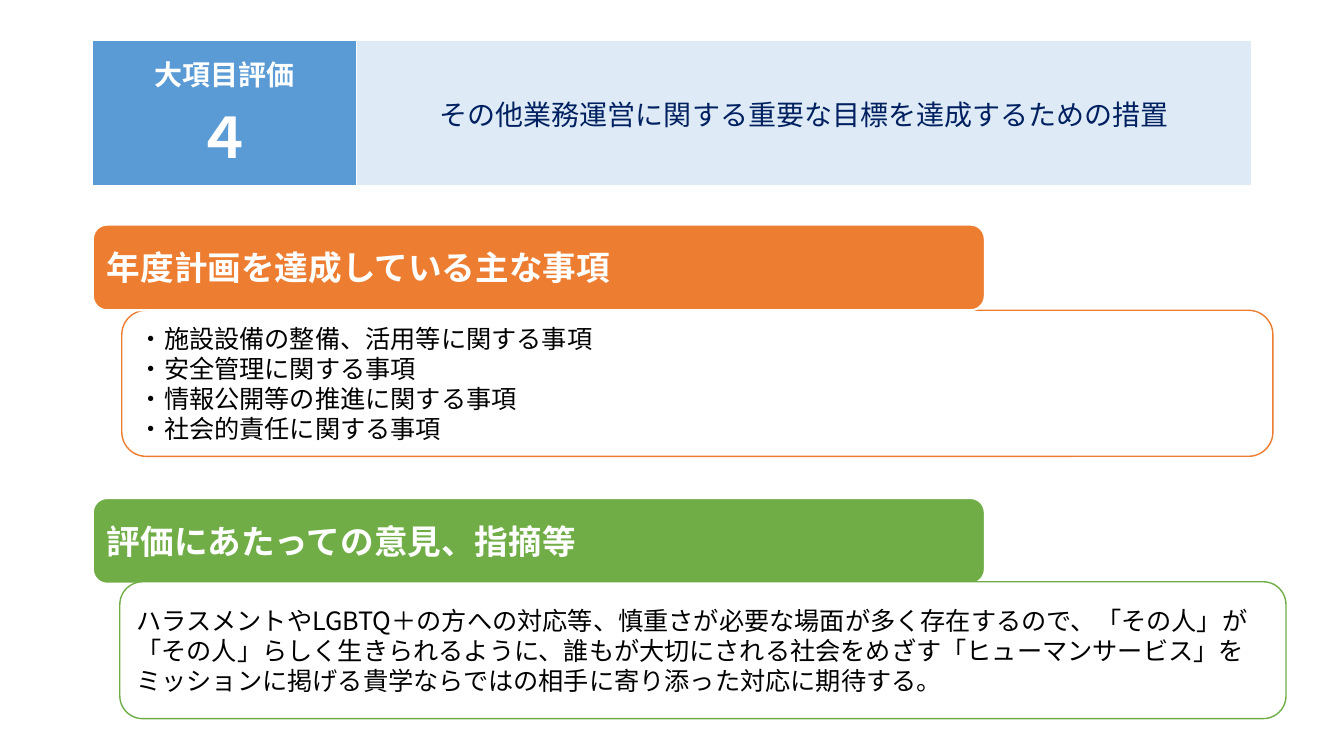
from dataclasses import dataclass

from lxml import etree
from pptx import Presentation
from pptx import util as u
from pptx.dml.color import RGBColor
from pptx.enum import shapes, text
from pptx.oxml.ns import qn

CJK = "Noto Sans CJK JP"
WHITE = "FFFFFF"
ORANGE = "ED7D31"
GREEN = "70AD47"


@dataclass
class Panel:
    left: float
    top: float
    width: float
    height: float
    fill: str
    line: str
    line_width: float
    lines: list[str]
    size: int
    color: str
    bold: bool = False
    spacing: float | None = None


def heading(top: float, fill: str, title: str) -> Panel:
    return Panel(2.34, top, 22.48, 2.16, fill, WHITE, 1.5, [title], 24, WHITE, True)


def body(left: float, top: float, width: float, height: float,
         line: str, lines: list[str]) -> Panel:
    return Panel(left, top, width, height, WHITE, line, 1, lines, 18, "000000",
                 spacing=21.4)


PANELS = [
    body(3.07, 7.82, 29.01, 3.68, ORANGE, [
        "・施設設備の整備、活用等に関する事項",
        "・安全管理に関する事項",
        "・情報公開等の推進に関する事項",
        "・社会的責任に関する事項",
    ]),
    heading(5.66, ORANGE, "年度計画を達成している主な事項"),
    heading(12.55, GREEN, "評価にあたっての意見、指摘等"),
    body(3.02, 14.66, 29.39, 3.45, GREEN, [
        "ハラスメントやLGBTQ＋の方への対応等、慎重さが必要な場面が多く存在するので、"
        "「その人」が「その人」らしく生きられるように、誰もが大切にされる社会をめざす"
        "「ヒューマンサービス」をミッションに掲げる貴学ならではの"
        "相手に寄り添った対応に期待する。",
    ]),
]


def rgb(value: str) -> RGBColor:
    return RGBColor.from_string(value)


def write(para, content: str, *, size: int, color: str, font: str = CJK,
          bold: bool = False, align=text.PP_ALIGN.LEFT,
          spacing: float | None = None) -> None:
    para.alignment = align
    if spacing is not None:
        para.line_spacing = u.Pt(spacing)
    span = para.add_run()
    span.text = content
    span.font.size = u.Pt(size)
    span.font.bold = bold
    span.font.color.rgb = rgb(color)
    span.font.name = font
    east_asian = etree.Element(qn("a:ea"), typeface=CJK)
    span.font._element.find(qn("a:latin")).addnext(east_asian)


def add_panel(page, panel: Panel) -> None:
    box = page.shapes.add_shape(
        shapes.MSO_SHAPE.ROUNDED_RECTANGLE, u.Cm(panel.left), u.Cm(panel.top),
        u.Cm(panel.width), u.Cm(panel.height))
    box.shadow.inherit = False
    box.fill.solid()
    box.fill.fore_color.rgb = rgb(panel.fill)
    box.line.color.rgb = rgb(panel.line)
    box.line.width = u.Pt(panel.line_width)
    frame = box.text_frame
    frame.word_wrap = True
    frame.vertical_anchor = text.MSO_ANCHOR.MIDDLE
    for index, line in enumerate(panel.lines):
        para = frame.add_paragraph() if index else frame.paragraphs[0]
        write(para, line, size=panel.size, color=panel.color, bold=panel.bold,
              spacing=panel.spacing)


def format_cell(cell, fill: str) -> None:
    cell.vertical_anchor = text.MSO_ANCHOR.MIDDLE
    cell.margin_left = cell.margin_right = u.Cm(0.1)
    cell.margin_top = cell.margin_bottom = 0
    properties = cell._tc.get_or_add_tcPr()
    for side, width in (("L", 1), ("R", 1), ("T", 1), ("B", 3)):
        border = etree.SubElement(properties, qn(f"a:ln{side}"), w=str(u.Pt(width)))
        solid = etree.SubElement(border, qn("a:solidFill"))
        etree.SubElement(solid, qn("a:srgbClr"), val=WHITE)
    cell.fill.solid()
    cell.fill.fore_color.rgb = rgb(fill)


def add_banner(page) -> None:
    table = page.shapes.add_table(
        1, 2, u.Cm(2.34), u.Cm(1.02), u.Cm(29.21), u.Cm(3.68)).table
    table.first_row = table.horz_banding = False
    for column, width in zip(table.columns, (6.65, 22.56)):
        column.width = u.Cm(width)
    number, title = table.cell(0, 0), table.cell(0, 1)
    format_cell(number, "5B9BD5")
    format_cell(title, "DEEBF7")
    center = text.PP_ALIGN.CENTER
    write(number.text_frame.paragraphs[0], "大項目評価", size=20, color=WHITE,
          font="Calibri", bold=True, align=center)
    write(number.text_frame.add_paragraph(), "４", size=40, color=WHITE,
          font="Calibri", bold=True, align=center)
    write(title.text_frame.paragraphs[0],
          "その他業務運営に関する重要な目標を達成するための措置",
          size=20, color="002060", font="Calibri", align=center)


def main() -> None:
    deck = Presentation()
    deck.slide_width, deck.slide_height = u.Cm(33.87), u.Cm(19.05)
    page = deck.slides.add_slide(deck.slide_layouts[6])
    add_banner(page)
    for panel in PANELS:
        add_panel(page, panel)
    deck.save("out.pptx")


if __name__ == "__main__":
    main()
